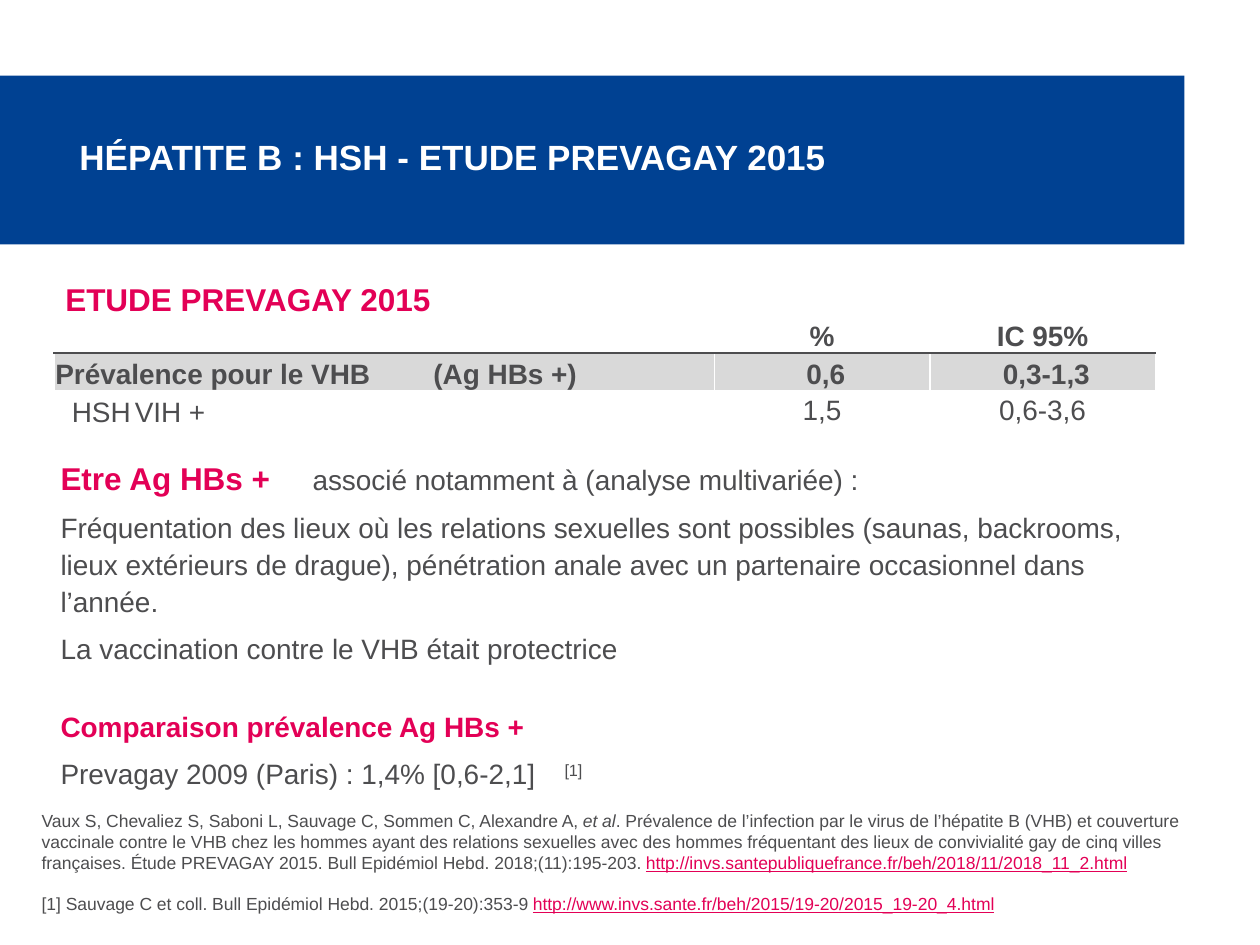
from dataclasses import dataclass

from lxml import etree
from pptx import Presentation
from pptx.dml.color import RGBColor
from pptx.enum import shapes, text
from pptx.oxml.ns import qn
from pptx.util import Inches, Pt


@dataclass(frozen=True)
class Theme:
    font: str = "Arial"
    blue: str = "004192"
    pink: str = "E30056"
    grey: str = "4D4D4F"
    band: str = "D9D9D9"
    white: str = "FFFFFF"
    title: int = 20
    heading: int = 18
    body: int = 16
    note: int = 10


T = Theme()
HEADING = {"size": T.heading, "color": T.pink, "bold": True}
BODY = {"size": T.body, "color": T.grey, "bold": False}
STRONG = {**BODY, "bold": True}
NOTE = {**BODY, "size": T.note}
LINK = {**NOTE, "color": T.pink, "underline": True}


def add_run(p, words, style):
    r = p.add_run()
    r.text = words
    r.font.name = T.font
    for name, value in style.items():
        if name == "color":
            r.font.color.rgb = RGBColor.from_string(value)
        elif name == "baseline":
            r.font._element.set("baseline", str(value))
        else:
            setattr(r.font, name, Pt(value) if name == "size" else value)


def fill_paragraph(p, runs, tab=None, **formats):
    """Write (words, style) runs without a bullet; tab is a stop in inches."""
    pPr = p._p.get_or_add_pPr()
    pPr.set("marL", "0")
    pPr.set("indent", "0")
    etree.SubElement(pPr, qn("a:buNone"))
    if tab:
        stops = etree.SubElement(pPr, qn("a:tabLst"))
        etree.SubElement(stops, qn("a:tab"), pos=str(Inches(tab)), algn="l")
    formats = {"alignment": text.PP_ALIGN.LEFT, "space_before": Pt(0), **formats}
    for name, value in formats.items():
        setattr(p, name, value)
    for words, style in runs:
        add_run(p, words, style)


def fill_frame(tf, paragraphs, **formats):
    formats = {"word_wrap": True, "auto_size": text.MSO_AUTO_SIZE.NONE,
               "vertical_anchor": text.MSO_ANCHOR.TOP,
               "margin_left": Inches(0.04), "margin_right": Inches(0.04),
               "margin_top": 0, "margin_bottom": 0, **formats}
    for name, value in formats.items():
        setattr(tf, name, value)
    for i, (runs, options) in enumerate(paragraphs):
        p = tf.add_paragraph() if i else tf.paragraphs[0]
        fill_paragraph(p, runs, **options)


def place(sp, left, top, width, height):
    sp.left, sp.top = Inches(left), Inches(top)
    sp.width, sp.height = Inches(width), Inches(height)


def add_rect(s, box, color):
    sp = s.shapes.add_shape(shapes.MSO_SHAPE.RECTANGLE, *map(Inches, box))
    sp.shadow.inherit = False
    sp.fill.solid()
    sp.fill.fore_color.rgb = RGBColor.from_string(color)
    sp.line.fill.background()
    return sp


def set_borders(cell, colors):
    """Give the cell 1 pt borders, colors in the order left, right, top, bottom."""
    tcPr = cell._tc.get_or_add_tcPr()
    for i, (side, color) in enumerate(zip(("lnL", "lnR", "lnT", "lnB"), colors)):
        ln = etree.Element(qn(f"a:{side}"), w=str(Pt(1)))
        solid = etree.SubElement(ln, qn("a:solidFill"))
        etree.SubElement(solid, qn("a:srgbClr"), val=color)
        tcPr.insert(i, ln)


def add_title(s):
    banner = add_rect(s, (0, 0.6, 9.4, 1.34), T.blue)
    title = s.shapes.title
    title.element.addprevious(banner.element)
    place(title, 0.59, 0.62, 7.17, 1.25)
    style = {"size": T.title, "color": T.white, "bold": True}
    fill_frame(title.text_frame,
               [([("HÉPATITE B : HSH - ETUDE PREVAGAY 2015", style)], {})],
               vertical_anchor=text.MSO_ANCHOR.MIDDLE)


def add_prevalence_table(s):
    rows = [("", "%", "IC 95%"),
            ("Prévalence pour le VHB\t(Ag HBs +)", "0,6", "0,3-1,3"),
            ("HSH\tVIH +", "1,5", "0,6-3,6")]
    row_styles = [STRONG, STRONG, BODY]
    fills = [T.white, T.band, T.white]
    lines = [T.white, T.grey, T.white, T.white]
    tabs = [None, 2.87, 0.64]
    indents = [(0.01, 0.01), (0.01, 0.07), (0.14, 0.01)]
    table = s.shapes.add_table(3, 3, *map(Inches, (0.43, 2.5, 8.74, 0.9))).table
    table.first_row = table.horz_banding = False
    for column, width in zip(table.columns, (5.24, 1.71, 1.79)):
        column.width = Inches(width)
    for i, row in enumerate(rows):
        table.rows[i].height = Inches(0.3)
        for j, words in enumerate(row):
            cell = table.cell(i, j)
            cell.fill.solid()
            cell.fill.fore_color.rgb = RGBColor.from_string(fills[i])
            set_borders(cell, (T.white, T.white, lines[i], lines[i + 1]))
            cell.vertical_anchor = text.MSO_ANCHOR.BOTTOM
            cell.margin_left = Inches(indents[i][j > 0])
            cell.margin_right = cell.margin_top = Inches(0.01)
            cell.margin_bottom = 0
            options = {"alignment": text.PP_ALIGN.CENTER} if j else {"tab": tabs[i]}
            if i == 2 and j:
                cell.vertical_anchor = text.MSO_ANCHOR.TOP
                cell.margin_top = 0
                options["line_spacing"] = 1.15
            fill_paragraph(cell.text_frame.paragraphs[0],
                           [(words, row_styles[i])], **options)


def add_body(s):
    body = s.placeholders[1]
    place(body, 0.44, 3.61, 8.94, 3.46)
    item = {"level": 1, "line_spacing": 1.1, "space_before": Pt(6)}
    fill_frame(body.text_frame, [
        ([("Etre Ag HBs +\t", HEADING),
          ("associé notamment à (analyse multivariée) :", BODY)],
         {"line_spacing": 1.1, "tab": 1.81}),
        ([("Fréquentation des lieux où les relations sexuelles sont possibles "
           "(saunas, backrooms, lieux extérieurs de drague), pénétration anale "
           "avec un partenaire occasionnel dans l’année.", BODY)], item),
        ([("La vaccination contre le VHB était protectrice", BODY)], item),
        ([("Comparaison prévalence Ag HBs +", {**STRONG, "color": T.pink})],
         {**item, "space_before": Pt(23.4)}),
        ([("Prevagay 2009 (Paris) : 1,4% [0,6-2,1]\t", BODY),
          ("[1]", {**BODY, "baseline": 30000})], {**item, "tab": 3.89}),
    ])


def add_study_heading(s):
    sp = s.shapes.add_textbox(*map(Inches, (0.42, 2.14, 5, 0.43)))
    fill_frame(sp.text_frame,
               [([("ETUDE PREVAGAY 2015", HEADING)], {"line_spacing": 1.1})],
               margin_left=Inches(0.1), margin_right=Inches(0.1),
               margin_top=Inches(0.05), margin_bottom=Inches(0.05))


def add_references(s):
    sp = add_rect(s, (0.29, 6.43, 9.52, 0.84), T.white)
    fill_frame(sp.text_frame, [
        ([("Vaux S, Chevaliez S, Saboni L, Sauvage C, Sommen C, Alexandre A, ", NOTE),
          ("et al", {**NOTE, "italic": True}),
          (". Prévalence de l’infection par le virus de l’hépatite B (VHB) et "
           "couverture vaccinale contre le VHB chez les hommes ayant des relations "
           "sexuelles avec des hommes fréquentant des lieux de convivialité gay de "
           "cinq villes françaises. Étude PREVAGAY 2015. Bull Epidémiol Hebd. "
           "2018;(11):195-203. ", NOTE),
          ("http://invs.santepubliquefrance.fr/beh/2018/11/2018_11_2.html", LINK)], {}),
        ([("[1] Sauvage C et coll. Bull Epidémiol Hebd. 2015;(19-20):353-9 ", NOTE),
          ("http://www.invs.sante.fr/beh/2015/19-20/2015_19-20_4.html", LINK)],
         {"space_before": Pt(11.5)}),
    ])


def main():
    prs = Presentation()
    prs.slide_width, prs.slide_height = Inches(10), Inches(7.5)
    s = prs.slides.add_slide(prs.slide_layouts[1])
    add_title(s)
    add_prevalence_table(s)
    add_body(s)
    add_study_heading(s)
    add_references(s)
    prs.save("out.pptx")


if __name__ == "__main__":
    main()
